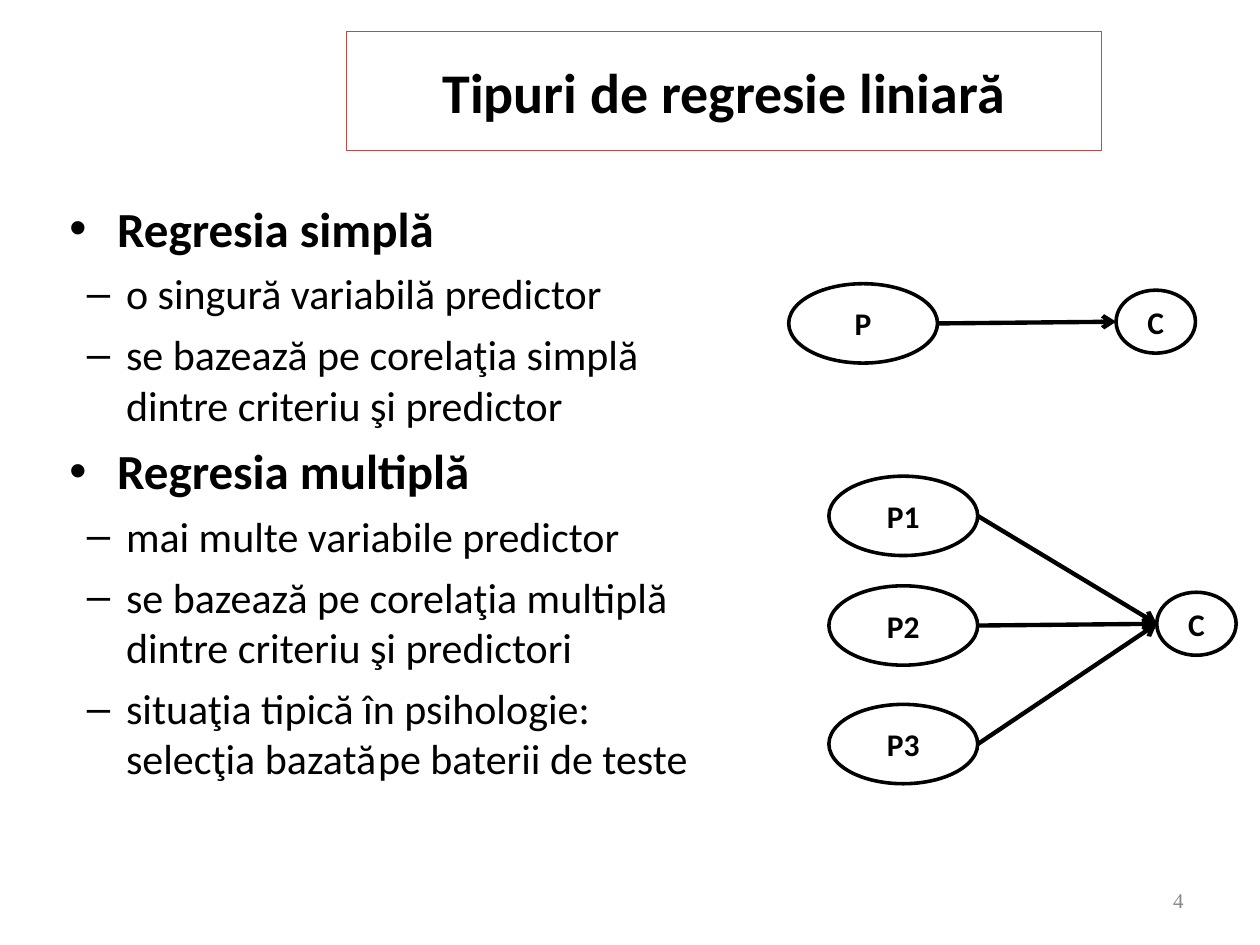
import pptx
import pptx.dml.color
import pptx.enum.shapes
import pptx.enum.text
import pptx.oxml.ns
import pptx.util
from lxml import etree

Cm = pptx.util.Cm
Pt = pptx.util.Pt
qn = pptx.oxml.ns.qn
ALIGN = pptx.enum.text.PP_ALIGN
ANCHOR = pptx.enum.text.MSO_ANCHOR

COLORS = {"ink": "000000", "frame": "BD4A47", "page": "888888"}
LEVELS = {
    "heading": {"bullet": "•", "left": 1.93, "hang": 0.96, "size": 28, "before": 6.5},
    "point": {"bullet": "–", "left": 2.11, "hang": 0.79, "size": 24, "before": 6},
    "follow": {"bullet": None, "left": 2.11, "hang": 0, "size": 24, "before": 0, "tab": 7.52},
}
ITEMS = [
    ("heading", "Regresia simplă"),
    ("point", "o singură variabilă predictor"),
    ("point", "se bazează pe corelaţia simplă\vdintre criteriu şi predictor"),
    ("heading", "Regresia multiplă"),
    ("point", "mai multe variabile predictor"),
    ("point", "se bazează pe corelaţia multiplă\vdintre criteriu şi predictori"),
    ("point", "situaţia tipică în psihologie:"),
    ("follow", "selecţia bazată\tpe baterii de teste"),
]


class SlideBuilder:
    font_name = "Calibri"
    oval_line = Pt(2.04)
    arrow_line = Pt(2.5)

    def __init__(self, slide):
        self.slide = slide

    def color(self, name):
        return pptx.dml.color.RGBColor.from_string(COLORS[name])

    def place(self, shape, left, top, width, height):
        shape.left, shape.top = Cm(left), Cm(top)
        shape.width, shape.height = Cm(width), Cm(height)

    def prepare(self, shape, wrap=True, anchor=ANCHOR.MIDDLE):
        frame = shape.text_frame
        frame.margin_left = frame.margin_right = 0
        frame.margin_top = frame.margin_bottom = 0
        frame.auto_size = pptx.enum.text.MSO_AUTO_SIZE.NONE
        frame.word_wrap = wrap
        frame.vertical_anchor = anchor
        return frame

    def style(self, para, size, bold=False, color="ink", name=None):
        para.font.name = name or self.font_name
        para.font.size = Pt(size)
        para.font.bold = bold
        para.font.color.rgb = self.color(color)

    def title(self, text, *area):
        shape = self.slide.shapes.title
        self.place(shape, *area)
        shape.line.color.rgb = self.color("frame")
        shape.line.width = Pt(0.72)
        para = self.prepare(shape).paragraphs[0]
        para.text = text
        para.alignment = ALIGN.CENTER
        self.style(para, 32, bold=True)

    def bullets(self, items, *area):
        shape = self.slide.placeholders[1]
        self.place(shape, *area)
        frame = self.prepare(shape, anchor=ANCHOR.TOP)
        for index, (kind, text) in enumerate(items):
            para = frame.add_paragraph() if index else frame.paragraphs[0]
            level = LEVELS[kind]
            para.text = text
            para.level = 0 if kind == "heading" else 1
            para.space_before = Pt(level["before"] if index else 0)
            self.indent(para, level)
            self.style(para, level["size"], bold=kind == "heading")

    def indent(self, para, level):
        props = para._p.get_or_add_pPr()
        props.set("marL", str(Cm(level["left"])))
        props.set("indent", str(-Cm(level["hang"])))
        if level["bullet"]:
            etree.SubElement(props, qn("a:buChar"), char=level["bullet"])
        else:
            etree.SubElement(props, qn("a:buNone"))
        if "tab" in level:
            tabs = etree.SubElement(props, qn("a:tabLst"))
            etree.SubElement(tabs, qn("a:tab"), pos=str(Cm(level["tab"])), algn="l")

    def oval(self, label, left, top, width, height):
        shape = self.slide.shapes.add_shape(
            pptx.enum.shapes.MSO_SHAPE.OVAL, Cm(left), Cm(top), Cm(width), Cm(height))
        shape.shadow.inherit = False
        shape.fill.background()
        shape.line.color.rgb = self.color("ink")
        shape.line.width = self.oval_line
        para = self.prepare(shape, wrap=False).paragraphs[0]
        para.text = label
        para.alignment = ALIGN.CENTER
        self.style(para, 18, bold=True)
        return shape

    def arrow(self, source, target):
        connector = self.slide.shapes.add_connector(
            pptx.enum.shapes.MSO_CONNECTOR.STRAIGHT,
            source.left + source.width, source.top + source.height // 2,
            target.left, target.top + target.height // 2)
        connector.line.color.rgb = self.color("ink")
        connector.line.width = self.arrow_line
        line = connector.line._get_or_add_ln()
        etree.SubElement(line, qn("a:tailEnd"), type="arrow")
        etree.SubElement(connector._element.spPr, qn("a:effectLst"))

    def diagram(self, predictors, left, criterion_left, criterion_top):
        criterion = self.oval("C", criterion_left, criterion_top, 1.6, 1.27)
        for label, top in predictors:
            self.arrow(self.oval(label, left, top, 3, 1.6), criterion)

    def page_number(self, text, left, top, width, height):
        box = self.slide.shapes.add_textbox(Cm(left), Cm(top), Cm(width), Cm(height))
        para = self.prepare(box, wrap=False).paragraphs[0]
        para.text = text
        self.style(para, 12, color="page", name="Times New Roman")


def main():
    deck = pptx.Presentation()
    deck.slide_width, deck.slide_height = Cm(25.4), Cm(19.05)
    page = SlideBuilder(deck.slides.add_slide(deck.slide_layouts[1]))
    page.title("Tipuri de regresie liniară", 6.99, 0.64, 15.21, 2.39)
    page.bullets(ITEMS, 0.43, 4, 15.44, 12.9)
    page.diagram([("P", 5.72)], 15.9, 22.5, 5.85)
    page.diagram([("P1", 9.6), ("P2", 11.81), ("P3", 14.2)], 16.71, 23.32, 11.94)
    page.page_number("4", 23.65, 17.86, 0.28, 0.58)
    deck.save("out.pptx")


if __name__ == "__main__":
    main()
